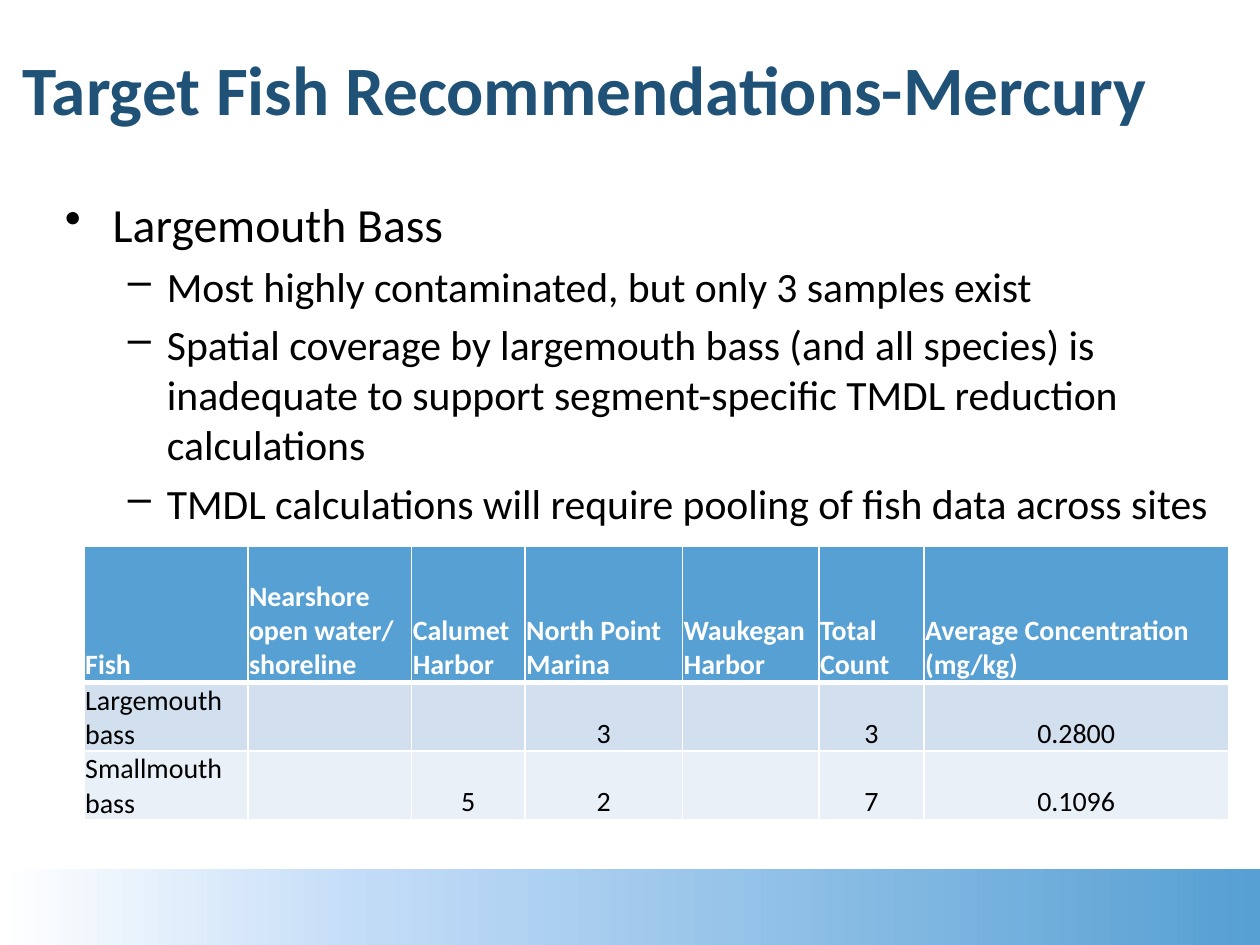
import copy
from dataclasses import dataclass

import pptx
import pptx.dml.color
import pptx.enum.shapes
import pptx.enum.text
import pptx.oxml
import pptx.oxml.ns
import pptx.util

ANCHOR = pptx.enum.text.MSO_ANCHOR
ALIGN = pptx.enum.text.PP_ALIGN
UNIT = pptx.util.Inches(1) / 12
SLIDE_COLUMNS, SLIDE_ROWS = 120, 90


@dataclass(frozen=True)
class Theme:
    font: str = "Calibri"
    heading: str = "1F5276"
    ink: str = "000000"
    paper: str = "FFFFFF"
    blue: str = "56A0D3"
    band_stops: tuple = ((0, "FFFFFF"), (30, "C1DBF7"), (100, "56A0D3"))
    row_fills: tuple = ("56A0D3", "D1DFEF", "E9F0F7")
    title_size: float = 39.6
    point_sizes: tuple = (27.2, 23.8)
    table_size: float = 16


THEME = Theme()

TITLE = "Target Fish Recommendations-Mercury"

POINTS = (
    (0, "Largemouth Bass"),
    (1, "Most highly contaminated, but only 3 samples exist"),
    (1, "Spatial coverage by largemouth bass (and all species) is inadequate "
        "to support segment-specific TMDL reduction calculations"),
    (1, "TMDL calculations will require pooling of fish data across sites"),
)
BULLETS = (("•", 0.38, -0.38), ("–", 0.81, -0.31))

COLUMN_WIDTHS = (15.6, 15.6, 10.8, 15, 13, 10, 29)
ROW_HEIGHTS = (13, 6.5, 6.5)
FISH_ROWS = (
    ("Fish", "Nearshore open water/\nshoreline", "Calumet Harbor",
     "North Point Marina", "Waukegan Harbor", "Total Count",
     "Average Concentration (mg/kg)"),
    ("Largemouth bass", "", "", "3", "", "3", "0.2800"),
    ("Smallmouth bass", "", "5", "2", "", "7", "0.1096"),
)


def grid(*counts):
    return [round(count * UNIT) for count in counts]


def rgb(value):
    return pptx.dml.color.RGBColor.from_string(value)


def apply_format(target, values):
    for name, value in values.items():
        setattr(target, name, value)


def write_run(paragraph, text, size, color, bold=False):
    run = paragraph.add_run()
    run.text = text
    apply_format(run.font, {"name": THEME.font, "size": pptx.util.Pt(size), "bold": bold})
    run.font.color.rgb = rgb(color)


def add_band(slide):
    band = slide.shapes.add_shape(
        pptx.enum.shapes.MSO_SHAPE.RECTANGLE, *grid(0, 82.8, SLIDE_COLUMNS, 7.2))
    band.shadow.inherit = False
    band.line.fill.background()
    band.fill.gradient()
    band.fill.gradient_angle = 0
    stop_list = band.fill.gradient_stops[0]._gs.getparent()
    stop_list.append(copy.deepcopy(stop_list[0]))
    for stop, (percent, color) in zip(band.fill.gradient_stops, THEME.band_stops):
        stop.position = percent / 100
        stop.color.rgb = rgb(color)


def add_text_frame(slide, place, anchor):
    frame = slide.shapes.add_textbox(*grid(*place)).text_frame
    apply_format(frame, {"word_wrap": True, "vertical_anchor": anchor})
    return frame


def add_title(slide):
    heading = add_text_frame(slide, (1, 2, 116, 14), ANCHOR.MIDDLE).paragraphs[0]
    heading.line_spacing = 0.85
    write_run(heading, TITLE, THEME.title_size, THEME.heading, True)


def set_bullet(paragraph, level):
    mark, margin, indent = BULLETS[level]
    properties = paragraph._p.get_or_add_pPr()
    properties.set("marL", str(pptx.util.Inches(margin)))
    properties.set("indent", str(pptx.util.Inches(indent)))
    properties.append(pptx.oxml.parse_xml(
        f'<a:buChar {pptx.oxml.ns.nsdecls("a")} char="{mark}"/>'))


def add_points(slide):
    frame = add_text_frame(slide, (5, 18, 115, 33), ANCHOR.TOP)
    for index, (level, text) in enumerate(POINTS):
        point = frame.add_paragraph() if index else frame.paragraphs[0]
        size = THEME.point_sizes[level]
        apply_format(point, {"level": level, "space_before": pptx.util.Pt(size * 0.2)})
        set_bullet(point, level)
        write_run(point, text, size, THEME.ink)


def set_borders(cell, widths):
    properties = cell._tc.get_or_add_tcPr()
    for side, width in widths.items():
        properties.append(pptx.oxml.parse_xml(
            f'<a:ln{side} {pptx.oxml.ns.nsdecls("a")} w="{pptx.util.Pt(width)}">'
            f'<a:solidFill><a:srgbClr val="{THEME.paper}"/></a:solidFill></a:ln{side}>'))


def fill_cell(cell, text, row, column):
    hairline = pptx.util.Inches(0.01)
    apply_format(cell, {
        "vertical_anchor": ANCHOR.BOTTOM, "margin_left": hairline,
        "margin_right": hairline, "margin_top": hairline, "margin_bottom": 0})
    set_borders(cell, {"L": 1, "R": 1, "T": 3 if row == 1 else 1, "B": 3 if row == 0 else 1})
    cell.fill.solid()
    cell.fill.fore_color.rgb = rgb(THEME.row_fills[row])
    if not text:
        return
    header = row == 0
    for index, line in enumerate(text.split("\n")):
        frame = cell.text_frame
        paragraph = frame.add_paragraph() if index else frame.paragraphs[0]
        paragraph.alignment = ALIGN.LEFT if header or column == 0 else ALIGN.CENTER
        write_run(paragraph, line, THEME.table_size,
                  THEME.paper if header else THEME.ink, header)


def add_fish_table(slide):
    place = grid(8, 52, sum(COLUMN_WIDTHS), sum(ROW_HEIGHTS))
    table = slide.shapes.add_table(len(ROW_HEIGHTS), len(COLUMN_WIDTHS), *place).table
    for column, width in zip(table.columns, grid(*COLUMN_WIDTHS)):
        column.width = width
    for row, height in zip(table.rows, grid(*ROW_HEIGHTS)):
        row.height = height
    for row, texts in enumerate(FISH_ROWS):
        for column, text in enumerate(texts):
            fill_cell(table.cell(row, column), text, row, column)


def main():
    deck = pptx.Presentation()
    deck.slide_width, deck.slide_height = grid(SLIDE_COLUMNS, SLIDE_ROWS)
    slide = deck.slides.add_slide(deck.slide_layouts[6])
    add_band(slide)
    add_title(slide)
    add_points(slide)
    add_fish_table(slide)
    deck.save("out.pptx")


if __name__ == "__main__":
    main()
